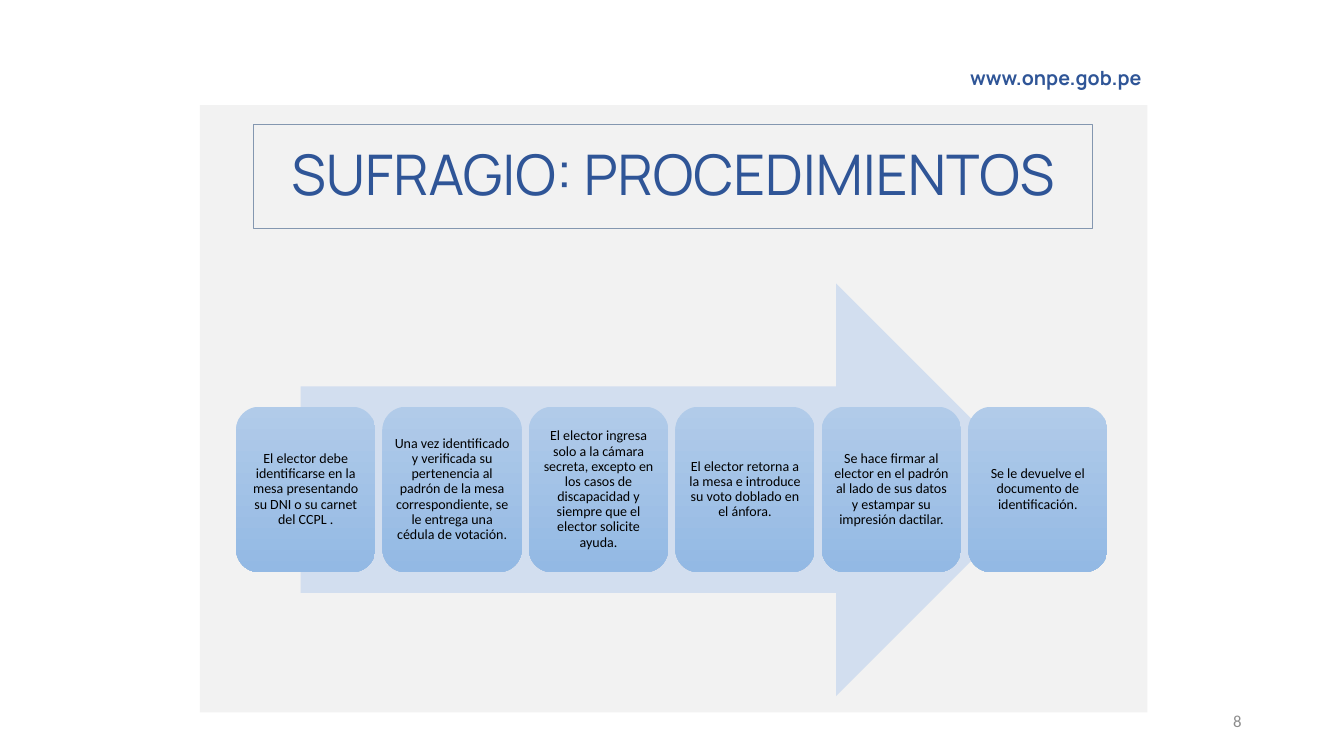
from pptx import Presentation
from pptx.dml.color import RGBColor
from pptx.enum.shapes import MSO_SHAPE
from pptx.enum.text import MSO_ANCHOR, PP_ALIGN
from pptx.util import Cm, Pt

NAVY = RGBColor(0x2F, 0x55, 0x97)
PANEL_GREY = RGBColor(0xF2, 0xF2, 0xF2)
ARROW_BLUE = RGBColor(0xD2, 0xDE, 0xEF)
STEP_TOP = RGBColor(0xB1, 0xCB, 0xE9)
STEP_BOTTOM = RGBColor(0x93, 0xB9, 0xE4)
FRAME_BLUE = RGBColor(0x84, 0x97, 0xB0)
NUMBER_GREY = RGBColor(0x8C, 0x8C, 0x8C)
BLACK = RGBColor(0, 0, 0)

STEPS = [
    "El elector debe identificarse en la mesa presentando su DNI o su carnet del CCPL .",
    "Una vez identificado y verificada su pertenencia al padrón de la mesa "
    "correspondiente, se le entrega una cédula de votación.",
    "El elector ingresa solo a la cámara secreta, excepto en los casos de "
    "discapacidad y siempre que el elector solicite ayuda.",
    "El elector retorna a la mesa e introduce su voto doblado en el ánfora.",
    "Se hace firmar al elector en el padrón al lado de sus datos y estampar "
    "su impresión dactilar.",
    "Se le devuelve el documento de identificación.",
]
STEP_LEFT, STEP_PITCH = 5.95, 3.69


class ProcedureSlide:
    """Draws the elements of the voting procedure slide in one style."""

    heading_font = "Manrope"
    body_font = "Calibri"

    def __init__(self, deck):
        self.page = deck.slides.add_slide(deck.slide_layouts[6])

    def shape(self, kind, left, top, width, height, color=None):
        box = self.page.shapes.add_shape(kind, Cm(left), Cm(top), Cm(width), Cm(height))
        box.shadow.inherit = False
        box.line.fill.background()
        if color is None:
            box.fill.background()
        else:
            box.fill.solid()
            box.fill.fore_color.rgb = color
        return box

    def fill_text(self, box, text, font, size, color, align=PP_ALIGN.CENTER,
                  spacing=0.9, bold=False, margin=0.25):
        frame = box.text_frame
        frame.word_wrap = True
        frame.vertical_anchor = MSO_ANCHOR.MIDDLE
        frame.margin_left = frame.margin_right = Cm(margin)
        frame.margin_top = frame.margin_bottom = Cm(min(margin, 0.13))
        para = frame.paragraphs[0]
        para.alignment = align
        para.line_spacing = spacing
        span = para.add_run()
        span.text = text
        span.font.name = font
        span.font.size = Pt(size)
        span.font.bold = bold
        span.font.color.rgb = color

    def label(self, left, top, width, height, text, font, size, color, bold=False):
        box = self.page.shapes.add_textbox(Cm(left), Cm(top), Cm(width), Cm(height))
        self.fill_text(box, text, font, size, color, PP_ALIGN.RIGHT, 1.0, bold)

    def title(self, text):
        box = self.shape(MSO_SHAPE.RECTANGLE, 6.38, 3.15, 21.16, 2.62)
        box.line.color.rgb = FRAME_BLUE
        box.line.width = Pt(0.75)
        self.fill_text(box, text, self.heading_font, 40, NAVY)

    def step(self, index, text):
        left = STEP_LEFT + index * STEP_PITCH
        box = self.shape(MSO_SHAPE.ROUNDED_RECTANGLE, left, 10.25, 3.51, 4.17)
        box.fill.gradient()
        box.fill.gradient_angle = 270
        for stop, color in zip(box.fill.gradient_stops, (STEP_TOP, STEP_BOTTOM)):
            stop.color.rgb = color
        self.fill_text(box, text, self.body_font, 10, BLACK, margin=0.1)


def main():
    deck = Presentation()
    deck.slide_width, deck.slide_height = Cm(33.87), Cm(19.05)
    slide = ProcedureSlide(deck)
    slide.shape(MSO_SHAPE.RECTANGLE, 5.04, 2.65, 23.88, 15.3, PANEL_GREY)
    slide.label(21, 1.45, 8.02, 1, "www.onpe.gob.pe", slide.heading_font, 14, NAVY, bold=True)
    slide.shape(MSO_SHAPE.RIGHT_ARROW, 7.58, 7.14, 18.69, 10.4, ARROW_BLUE)
    for index, text in enumerate(STEPS):
        slide.step(index, text)
    slide.title("SUFRAGIO: PROCEDIMIENTOS")
    slide.label(23.92, 17.66, 7.62, 1.01, "8", slide.body_font, 12, NUMBER_GREY)
    deck.save("out.pptx")


if __name__ == "__main__":
    main()
